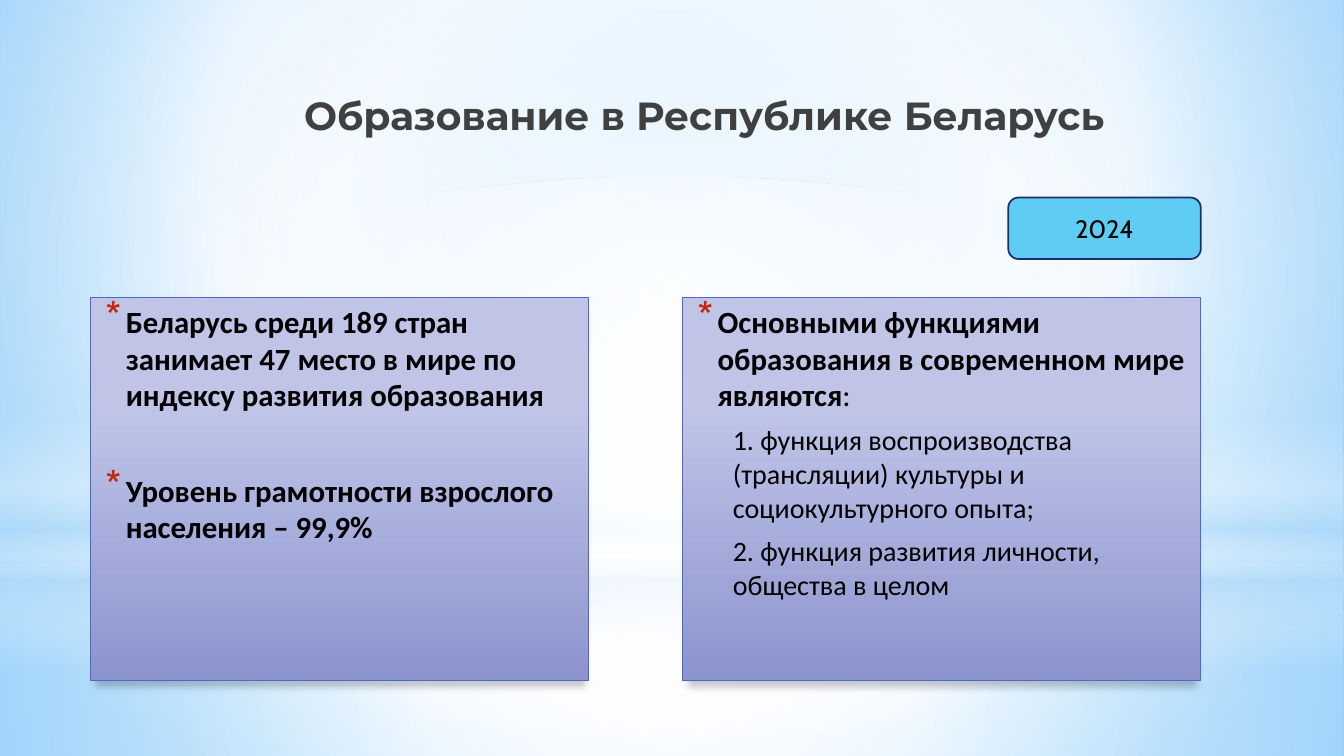
"""Builds the slide on education in the Republic of Belarus."""
from lxml import etree
from pptx import Presentation
from pptx.dml.color import RGBColor
from pptx.enum.shapes import MSO_SHAPE
from pptx.enum.text import MSO_ANCHOR, PP_ALIGN
from pptx.oxml.ns import qn
from pptx.util import Inches, Pt

RECT, OVAL, ROUNDED = MSO_SHAPE.RECTANGLE, MSO_SHAPE.OVAL, MSO_SHAPE.ROUNDED_RECTANGLE
TOP, MIDDLE = MSO_ANCHOR.TOP, MSO_ANCHOR.MIDDLE
LEFT, CENTER, RIGHT = PP_ALIGN.LEFT, PP_ALIGN.CENTER, PP_ALIGN.RIGHT

TITLE = "Образование в Республике Беларусь"
YEAR = "2024"
PANELS = [
    (0.9, 4.94, [
        ("point", 4, [("Беларусь среди 189 стран занимает 47 место в мире по "
                       "индексу развития образования", True)]),
        ("point", 38.5, [("Уровень грамотности взрослого населения – 99,9%", True)]),
    ]),
    (6.77, 5.14, [
        ("point", 4, [("Основными функциями образования в современном мире являются", True),
                      (":", False)]),
        ("detail", 4, [("1. функция воспроизводства (трансляции) культуры и "
                        "социокультурного опыта;", False)]),
        ("detail", 4, [("2. функция развития личности, общества в целом", False)]),
    ]),
]
PANEL_TOP, PANEL_HEIGHT = 2.95, 3.8

THEME = {
    "title": ("Montserrat", 28, "404040"),
    "point": ("Calibri", 22, "000000"),
    "detail": ("Calibri", 20, "000000"),
    "year": ("Cabin", 18, "000000"),
    "bullet": "C3260C",
    "badge": "5ECCF3",
    "badge_line": "1F2E69",
    "panel_line": "4E67C8",
    "panel": [(28, "C0C5E8", 100), (100, "8C94CE", 100)],
    "background": [(0, "9ED5FF", 100), (60, "FFFFFF", 100), (100, "5BB9FF", 100)],
}
INDENTS = {"point": (0.25, -0.2), "detail": (0.4, 0)}
CENTRE = (50, 50, 50, 50)
GLOWS = [
    (RECT, (0, 5.58, 13.33, 1.92),
     [(0, "FFFFFF", 91), (37, "FFFFFF", 76), (100, "B4DCFA", 79)], CENTRE),
    (RECT, (0, 0, 13.33, 5.58),
     [(0, "FFFFFF", 89), (48, "FFFFFF", 62), (100, "B4DCFA", 79)], CENTRE),
    (RECT, (0, 4.12, 13.33, 2.5),
     [(0, "FFFFFF", 0), (29, "FFFFFF", 30), (45, "B4DCFA", 40),
      (55, "FFFFFF", 26), (65, "B4DCFA", 60), (100, "FFFFFF", 0)], None),
    (OVAL, (0, 1.75, 13.33, 5.58), [(0, "FFFFFF", 100), (56, "FFFFFF", 0)], CENTRE),
]


def add(parent, tag, **attrs):
    return etree.SubElement(parent, qn(tag), {k: str(v) for k, v in attrs.items()})


def add_color(parent, color, alpha):
    add(add(parent, "a:srgbClr", val=color), "a:alpha", val=alpha * 1000)


def set_gradient(owner, fill, stops, focus=None):
    fill.solid()
    solid = next(owner.iter(qn("a:solidFill")))
    grad = etree.Element(qn("a:gradFill"), rotWithShape="1")
    stop_list = add(grad, "a:gsLst")
    for pos, color, alpha in stops:
        add_color(add(stop_list, "a:gs", pos=pos * 1000), color, alpha)
    if focus:
        edges = {side: v * 1000 for side, v in zip("ltrb", focus)}
        add(add(grad, "a:path", path="circle"), "a:fillToRect", **edges)
    else:
        add(grad, "a:lin", ang=5400000, scaled=0)
    solid.getparent().replace(solid, grad)


def add_shape(s, kind, box, line=None, width=0):
    sp = s.shapes.add_shape(kind, *map(Inches, box))
    sp.shadow.inherit = False
    if line:
        sp.line.color.rgb = RGBColor.from_string(line)
        sp.line.width = Pt(width)
    else:
        sp.line.fill.background()
    return sp


def add_shadow(sp):
    effects = sp._element.spPr.find(qn("a:effectLst"))
    shadow = add(effects, "a:outerShdw", blurRad=Pt(5), dist=Pt(4), dir=5400000,
                 sx=98000, sy=98000, rotWithShape=0)
    add_color(shadow, "000000", 20)


def set_font(p, style):
    name, size, color = THEME[style]
    p.font.name, p.font.size = name, Pt(size)
    p.font.color.rgb = RGBColor.from_string(color)


def set_label(sp, text, style, align, anchor):
    tf = sp.text_frame
    tf.word_wrap, tf.vertical_anchor = True, anchor
    p = tf.paragraphs[0]
    p.text, p.alignment = text, align
    set_font(p, style)
    return p


def set_indent(p, style):
    margin, first = INDENTS[style]
    pPr = p._p.get_or_add_pPr()
    pPr.set("marL", str(Inches(margin)))
    pPr.set("indent", str(Inches(first)))
    if style == "point":
        bullet = [etree.Element(qn(f"a:{tag}")) for tag in ("buClr", "buSzPct", "buChar")]
        add(bullet[0], "a:srgbClr", val=THEME["bullet"])
        bullet[1].set("val", "130000")
        bullet[2].set("char", "*")
        for offset, element in enumerate(bullet):
            pPr.insert(len(pPr.findall(qn("a:spcBef")) + pPr.findall(qn("a:spcAft"))) + offset,
                       element)


def add_panel(s, left, width, paragraphs):
    sp = add_shape(s, RECT, (left, PANEL_TOP, width, PANEL_HEIGHT), THEME["panel_line"], 0.75)
    set_gradient(sp._element.spPr, sp.fill, THEME["panel"])
    add_shadow(sp)
    tf = sp.text_frame
    tf.word_wrap, tf.vertical_anchor = True, TOP
    for i, (style, before, runs) in enumerate(paragraphs):
        p = tf.add_paragraph() if i else tf.paragraphs[0]
        p.alignment, p.space_before, p.space_after = LEFT, Pt(before), Pt(3)
        set_indent(p, style)
        set_font(p, style)
        for text, bold in runs:
            r = p.add_run()
            r.text, r.font.bold = text, bold


def main():
    prs = Presentation()
    prs.slide_width, prs.slide_height = Inches(13.33), Inches(7.5)
    s = prs.slides.add_slide(prs.slide_layouts[6])
    set_gradient(s._element, s.background.fill, THEME["background"], (20, 10, 20, 60))
    for kind, box, stops, focus in GLOWS:
        sp = add_shape(s, kind, box)
        set_gradient(sp._element.spPr, sp.fill, stops, focus)
    title = s.shapes.add_textbox(*map(Inches, (1.65, 0.86, 9.4, 0.72)))
    set_label(title, TITLE, "title", RIGHT, TOP).font.bold = True
    for panel in PANELS:
        add_panel(s, *panel)
    badge = add_shape(s, ROUNDED, (10, 1.96, 1.91, 0.61), THEME["badge_line"], 1.25)
    badge.fill.solid()
    badge.fill.fore_color.rgb = RGBColor.from_string(THEME["badge"])
    set_label(badge, YEAR, "year", CENTER, MIDDLE)
    prs.save("out.pptx")


if __name__ == "__main__":
    main()
